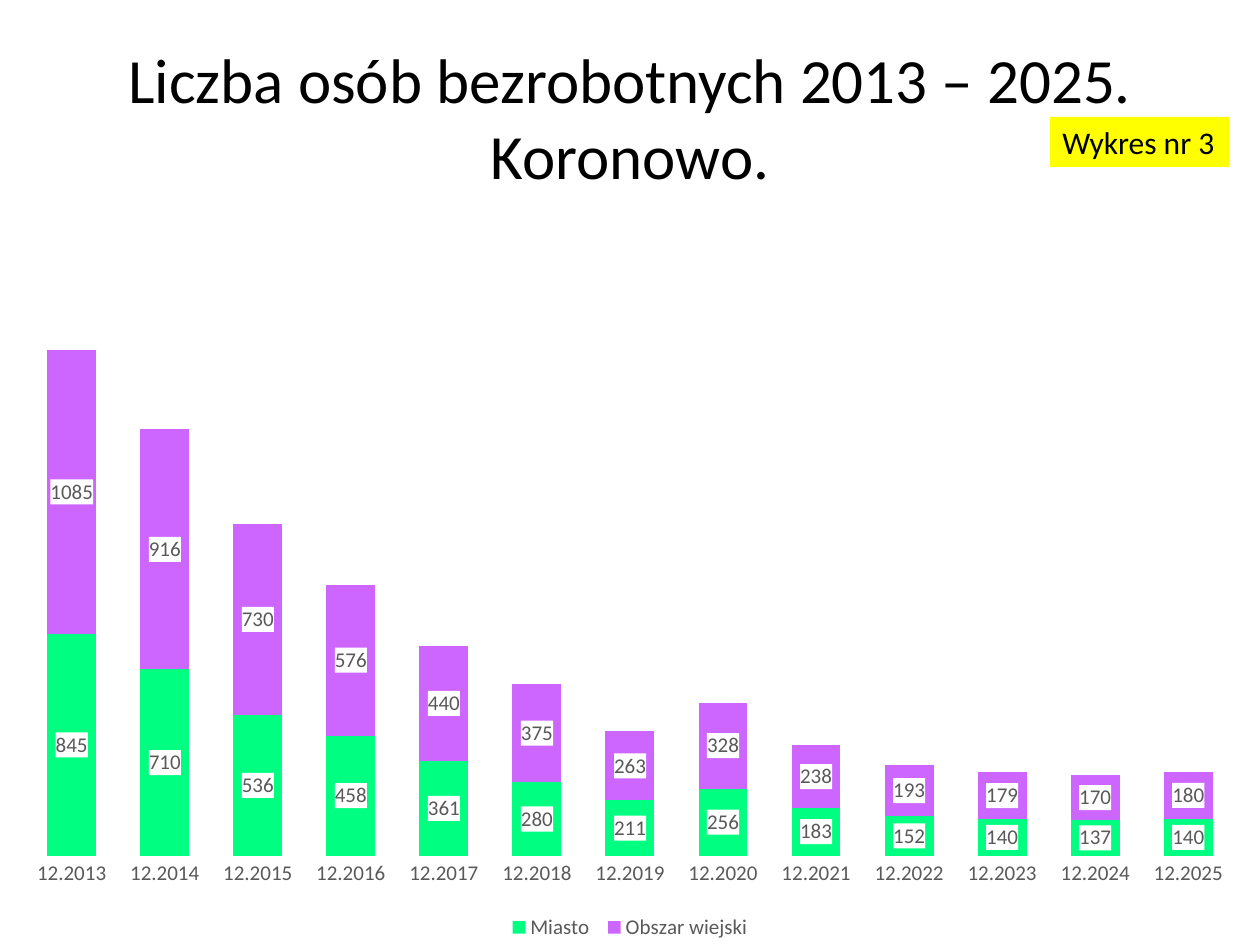
from dataclasses import dataclass

import lxml.etree
import pptx
import pptx.chart.data
import pptx.dml.color
import pptx.enum.chart
import pptx.enum.shapes
import pptx.enum.text
import pptx.oxml
import pptx.oxml.ns
import pptx.util

SCALE = pptx.util.Inches(1) / 126


@dataclass(frozen=True)
class Theme:
    face: str = "Calibri"
    ink: str = "000000"
    grey: str = "595959"
    paper: str = "FFFFFF"
    tag: str = "FFFF00"
    town: str = "00FF80"
    rural: str = "CC66FF"
    head: int = 36
    note: int = 18
    label: int = 12
    base: int = 10


THEME = Theme()
YEARS = [f"12.{year}" for year in range(2013, 2026)]
SERIES = [
    ("Miasto ", THEME.town,
     [845, 710, 536, 458, 361, 280, 211, 256, 183, 152, 140, 137, 140]),
    ("Obszar wiejski", THEME.rural,
     [1085, 916, 730, 576, 440, 375, 263, 328, 238, 193, 179, 170, 180]),
]


def px(*sizes):
    return [round(size * SCALE) for size in sizes]


def paint(fill, color):
    fill.solid()
    fill.fore_color.rgb = pptx.dml.color.RGBColor.from_string(color)


def style(font, size, color):
    font.name = THEME.face
    font.size = pptx.util.Pt(size)
    font.color.rgb = pptx.dml.color.RGBColor.from_string(color)


def write(frame, text, size, align):
    frame.text = text
    for para in frame.paragraphs:
        para.alignment = align
        for run in para.runs:
            style(run.font, size, THEME.ink)


def add_title(slide, text, box):
    title = slide.shapes.title
    title.left, title.top, title.width, title.height = px(*box)
    frame = title.text_frame
    frame.vertical_anchor = pptx.enum.text.MSO_ANCHOR.MIDDLE
    write(frame, text, THEME.head, pptx.enum.text.PP_ALIGN.CENTER)


def add_tag(slide, text, box):
    kind = pptx.enum.shapes.MSO_SHAPE.RECTANGLE
    tag = slide.shapes.add_shape(kind, *px(*box))
    tag.shadow.inherit = False
    paint(tag.fill, THEME.tag)
    tag.line.fill.background()
    frame = tag.text_frame
    frame.word_wrap = False
    frame.auto_size = pptx.enum.text.MSO_AUTO_SIZE.SHAPE_TO_FIT_TEXT
    frame.vertical_anchor = pptx.enum.text.MSO_ANCHOR.TOP
    write(frame, text, THEME.note, pptx.enum.text.PP_ALIGN.LEFT)


def back_labels(labels, color):
    """Put a filled box behind each data label."""
    qn = pptx.oxml.ns.qn
    props = lxml.etree.Element(qn("c:spPr"))
    fill = lxml.etree.SubElement(props, qn("a:solidFill"))
    lxml.etree.SubElement(fill, qn("a:srgbClr"), val=color)
    labels._element.find(qn("c:txPr")).addprevious(props)


def style_series(series, color):
    paint(series.format.fill, color)
    series.invert_if_negative = False
    labels = series.data_labels
    labels.show_value = True
    labels.position = pptx.enum.chart.XL_LABEL_POSITION.CENTER
    style(labels.font, THEME.label, THEME.grey)
    back_labels(labels, THEME.paper)


def style_axes(chart):
    axis = chart.category_axis
    axis.major_tick_mark = pptx.enum.chart.XL_TICK_MARK.NONE
    axis.format.line.fill.background()
    style(axis.tick_labels.font, THEME.label, THEME.grey)
    values = chart.value_axis
    values.visible = False
    values.has_major_gridlines = False
    values.minimum_scale, values.maximum_scale = 0, 2500


def add_chart(slide, box):
    data = pptx.chart.data.CategoryChartData()
    data.categories = YEARS
    for name, _, counts in SERIES:
        data.add_series(name, counts)
    kind = pptx.enum.chart.XL_CHART_TYPE.COLUMN_STACKED
    chart = slide.shapes.add_chart(kind, *px(*box), data).chart
    chart.has_title = False
    style(chart.font, THEME.base, THEME.ink)
    plot = chart.plots[0]
    plot.gap_width, plot.overlap = 90, 100
    plot.vary_by_categories = False
    for series, (_, color, _) in zip(plot.series, SERIES):
        style_series(series, color)
    style_axes(chart)
    chart.has_legend = True
    chart.legend.position = pptx.enum.chart.XL_LEGEND_POSITION.BOTTOM
    chart.legend.include_in_layout = False
    style(chart.legend.font, THEME.label, THEME.grey)


def main():
    deck = pptx.Presentation()
    deck.slide_width, deck.slide_height = px(1260, 945)
    slide = deck.slides.add_slide(deck.slide_layouts[5])
    paint(slide.background.fill, THEME.paper)
    add_title(slide, "Liczba osób bezrobotnych 2013 – 2025. Koronowo.",
              (63, 38, 1134, 157))
    add_chart(slide, (0, 185, 1260, 760))
    add_tag(slide, "Wykres nr 3", (1050, 117, 179, 50))
    deck.save("out.pptx")


if __name__ == "__main__":
    main()
